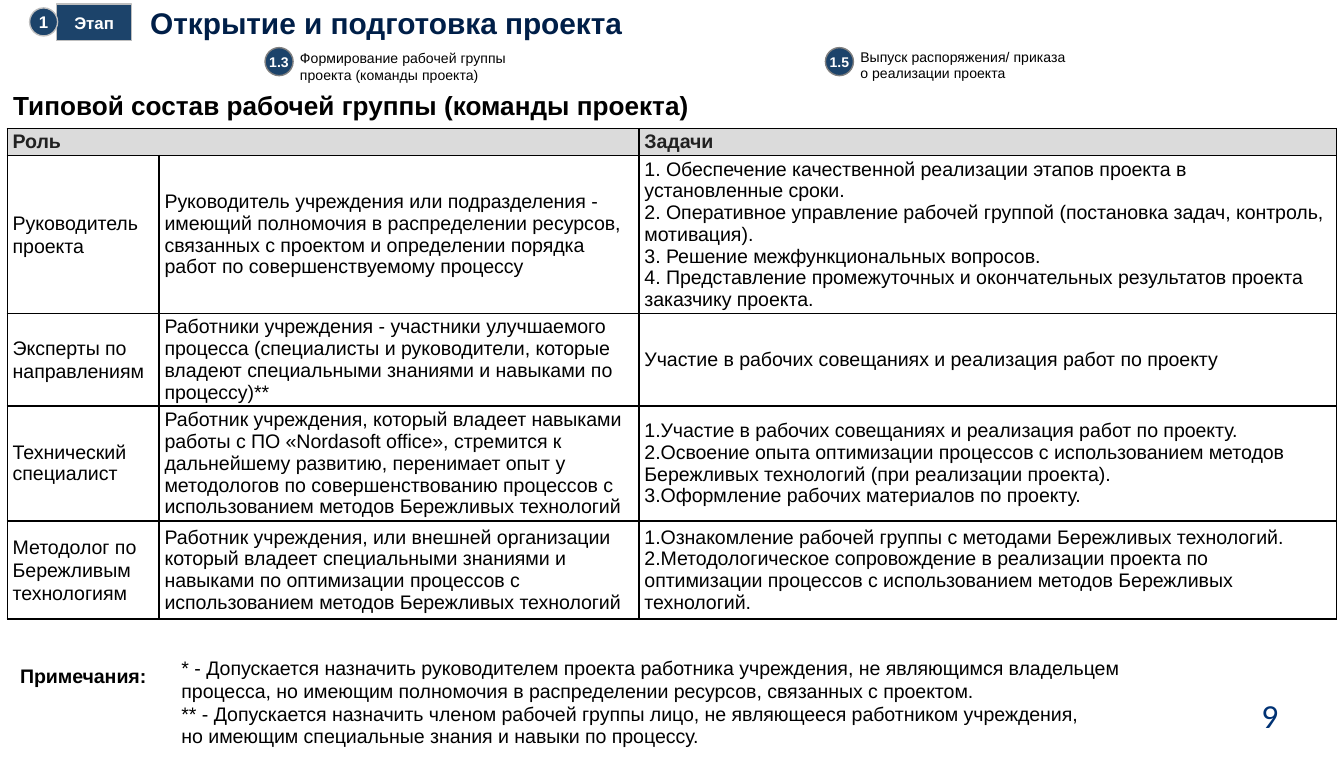
from lxml.etree import SubElement
from pptx import Presentation
from pptx.dml.color import RGBColor
from pptx.enum.shapes import MSO_SHAPE
from pptx.enum.text import MSO_ANCHOR, PP_ALIGN
from pptx.oxml.ns import qn
from pptx.util import Cm, Pt

BLACK = RGBColor(0x00, 0x00, 0x00)
WHITE = RGBColor(0xFF, 0xFF, 0xFF)
DARK = RGBColor(0x21, 0x21, 0x21)
NAVY = RGBColor(0x00, 0x1F, 0x48)
BLUE = RGBColor(0x1C, 0x43, 0x6A)
PAGE = RGBColor(0x00, 0x32, 0x74)
HEAD = RGBColor(0xDB, 0xDB, 0xDB)
SILVER = RGBColor(0xBF, 0xBF, 0xBF)
GRAY = RGBColor(0x80, 0x80, 0x80)

# Content
TITLE = "Открытие и подготовка проекта"
GROUP = "Типовой состав рабочей группы (команды проекта)"
STEPS = [  # number, text, left of badge, top of text
    ("1.3", "Формирование рабочей группы проекта (команды проекта)", 5.01, 0.93),
    ("1.5", "Выпуск распоряжения/ приказа о реализации проекта", 15.6, 0.91),
]
COLS = [2.87, 9.07, 13.18]
ROWS = [0.51, 2.98, 1.75, 2.17, 1.85]
HEADS = [(0, "Роль"), (2, "Задачи")]
ROLES = [  # role, (line spacing, space after), person, space after, tasks, numbered
    ("Руководитель проекта", (1.07, 3),
     "Руководитель учреждения или подразделения - имеющий полномочия в "
     "распределении ресурсов, связанных с проектом и определении порядка "
     "работ по совершенствуемому процессу", 3,
     ["1. Обеспечение качественной реализации этапов проекта в установленные сроки.",
      "2. Оперативное управление рабочей группой (постановка задач, контроль, мотивация).",
      "3. Решение межфункциональных вопросов.",
      "4. Представление промежуточных и окончательных результатов проекта "
      "заказчику проекта."], False),
    ("Эксперты по направлениям", (1.07, 3),
     "Работники учреждения - участники улучшаемого процесса (специалисты и "
     "руководители, которые владеют специальными знаниями и навыками по "
     "процессу)**", 3,
     ["Участие в рабочих совещаниях и реализация работ по проекту"], False),
    ("Технический специалист", (0.97, 8),
     "Работник учреждения, который владеет навыками работы с ПО «Nordasoft "
     "office», стремится к дальнейшему развитию, перенимает опыт у методологов "
     "по совершенствованию процессов с использованием методов Бережливых "
     "технологий", 0,
     ["Участие в рабочих совещаниях и реализация работ по проекту.",
      "Освоение опыта оптимизации процессов с использованием методов "
      "Бережливых технологий (при реализации проекта).",
      "Оформление рабочих материалов по проекту."], True),
    ("Методолог по Бережливым технологиям", (1.07, 3),
     "Работник учреждения, или внешней организации который владеет "
     "специальными знаниями и навыками по оптимизации процессов с "
     "использованием методов Бережливых технологий", 0,
     ["Ознакомление рабочей группы с методами Бережливых технологий.",
      "Методологическое сопровождение в реализации проекта по оптимизации "
      "процессов с использованием методов Бережливых технологий."], True),
]
NOTES = [
    ["* - Допускается назначить руководителем проекта работника учреждения, не "
     "являющимся владельцем процесса, но имеющим полномочия в распределении "
     "ресурсов, связанных с проектом."],
    ["** - Допускается назначить членом рабочей группы лицо, не являющееся "
     "работником учреждения, ",
     "но имеющим специальные знания и навыки по процессу."],
]

deck = Presentation()
deck.slide_width, deck.slide_height = Cm(25.4), Cm(14.3)
slide = deck.slides.add_slide(deck.slide_layouts[6])


def write(frame, paras, size, color=BLACK, bold=False, face="Arial",
          line=None, after=0, align=None, number=False):
    """Fill a frame; each paragraph is a list of lines."""
    for i, lines in enumerate(paras):
        para = frame.paragraphs[0] if i == 0 else frame.add_paragraph()
        if number:
            props = para._p.get_or_add_pPr()
            props.set("marL", "0")
            props.set("indent", "0")
            SubElement(props, qn("a:buFont"), typeface="+mj-lt")
            SubElement(props, qn("a:buAutoNum"), type="arabicPeriod")
        if line:
            para.line_spacing = line
        if after and i == len(paras) - 1:
            para.space_after = Pt(after)
        if align is not None:
            para.alignment = align
        for j, text in enumerate(lines):
            if j:
                para.add_line_break()
            run = para.add_run()
            run.text = text
            font = run.font
            font.name, font.size, font.bold = face, Pt(size), bold
            font.color.rgb = color


def inset(frame, gap):
    frame.margin_left = frame.margin_right = Cm(gap)
    frame.margin_top = frame.margin_bottom = Cm(gap)


def label(box, paras, size, gap=None, anchor=MSO_ANCHOR.TOP, wrap=True, **style):
    frame = slide.shapes.add_textbox(*map(Cm, box)).text_frame
    frame.word_wrap, frame.vertical_anchor = wrap, anchor
    if gap is not None:
        inset(frame, gap)
    write(frame, paras, size, **style)


def badge(kind, box, text, size, edge, gap=0, wrap=False):
    shape = slide.shapes.add_shape(kind, *map(Cm, box))
    shape.shadow.inherit = False
    shape.fill.solid()
    shape.fill.fore_color.rgb = BLUE
    shape.line.color.rgb, shape.line.width = edge, Pt(0.75)
    frame = shape.text_frame
    frame.word_wrap, frame.vertical_anchor = wrap, MSO_ANCHOR.MIDDLE
    inset(frame, gap)
    write(frame, [[text]], size, WHITE, True, align=PP_ALIGN.CENTER)


def border(cell):
    props = cell._tc.get_or_add_tcPr()
    for i, side in enumerate(("a:lnL", "a:lnR", "a:lnT", "a:lnB")):
        edge = props.makeelement(qn(side), {"w": str(Pt(1))})
        fill = SubElement(edge, qn("a:solidFill"))
        SubElement(fill, qn("a:srgbClr"), val=str(BLACK))
        props.insert(i, edge)


# Table of roles
grid = slide.shapes.add_table(len(ROWS), len(COLS), Cm(0.14), Cm(2.43),
                              Cm(sum(COLS)), Cm(sum(ROWS))).table
for col, width in zip(grid.columns, COLS):
    col.width = Cm(width)
for row, height in zip(grid.rows, ROWS):
    row.height = Cm(height)
for r in range(len(ROWS)):
    for c in range(len(COLS)):
        cell = grid.cell(r, c)
        cell.vertical_anchor = MSO_ANCHOR.MIDDLE
        cell.margin_left = cell.margin_right = Cm(0.1)
        cell.margin_top = cell.margin_bottom = Cm(0.05)
        if r:
            cell.fill.background()
        else:
            cell.fill.solid()
            cell.fill.fore_color.rgb = HEAD
        border(cell)
grid.cell(0, 0).merge(grid.cell(0, 1))
for c, text in HEADS:
    write(grid.cell(0, c).text_frame, [[text]], 10.5, DARK, True, line=0.97)
for r, (role, (line, after), person, gap, tasks, number) in enumerate(ROLES, 1):
    role_cell, who_cell, task_cell = (grid.cell(r, c).text_frame for c in range(3))
    write(role_cell, [[role]], 10.5, line=line, after=after)
    write(who_cell, [[person]], 10.5, after=gap)
    write(task_cell, [[task] for task in tasks], 10.5, number=number)

# Title and stage
label((2.84, 0.08, 12.75, 0.69), [[TITLE]], 16, gap=0,
      anchor=MSO_ANCHOR.MIDDLE, color=NAVY, bold=True)
badge(MSO_SHAPE.RECTANGLE, (1.07, 0.08, 1.42, 0.69), "Этап", 9, SILVER, 0.15, True)
badge(MSO_SHAPE.OVAL, (0.56, 0.15, 0.53, 0.53), "1", 9, SILVER)

# Steps
for num, text, left, top in STEPS:
    badge(MSO_SHAPE.OVAL, (left, 0.9, 0.53, 0.53), num, 7.5, GRAY)
    label((left + 0.66, top, 4.08, 0.64), [[text]], 7.5, gap=0)

# Notes, table heading and page number
label((3.18, 12.29, 18.69, 2), NOTES, 10.5, line=0.97, after=8)
label((0.13, 12.45, 3.05, 0.69), [["Примечания:"]], 10.5, wrap=False,
      bold=True, line=0.97)
label((0, 1.57, 19.02, 0.86), [[GROUP]], 14, bold=True)
label((23.59, 13.01, 1.75, 1.04), [["9"]], 18, color=PAGE, face="Calibri")

deck.save("out.pptx")
